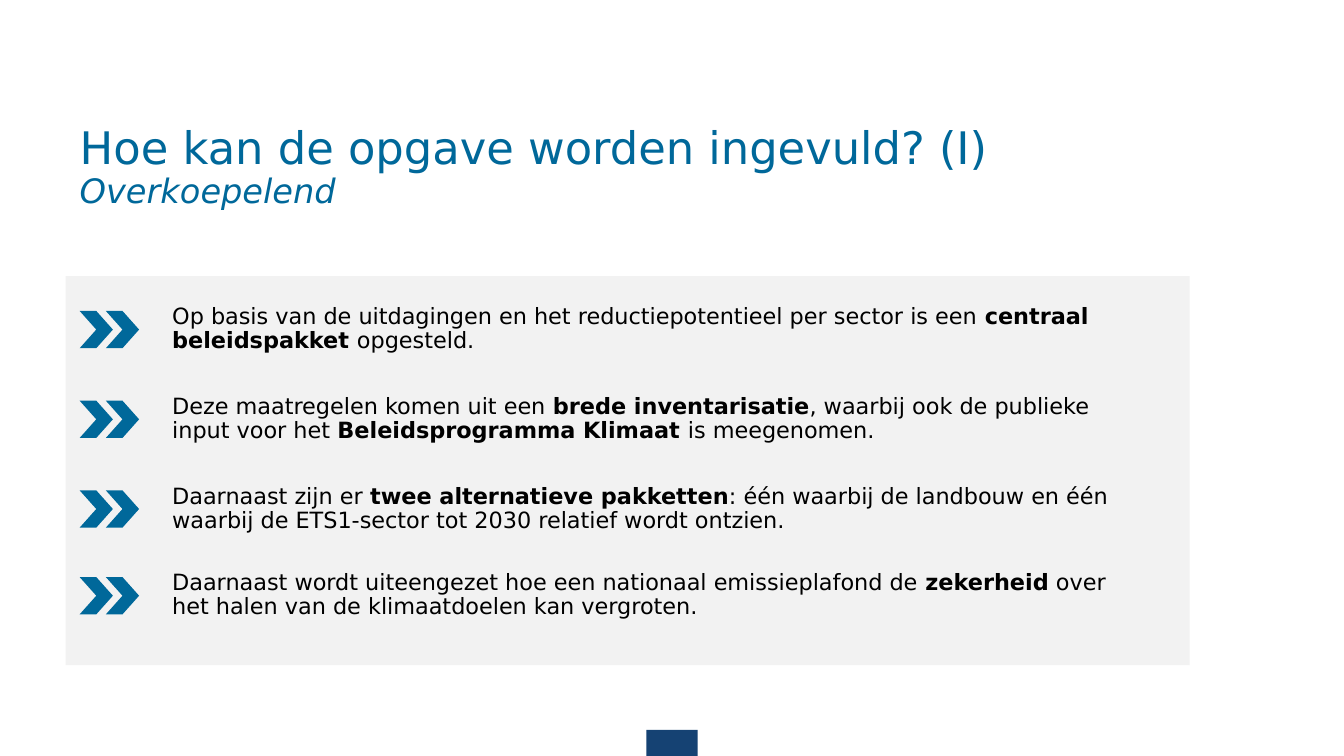
from pptx import Presentation
from pptx.dml.color import RGBColor
from pptx.enum.shapes import MSO_SHAPE
from pptx.enum.text import MSO_ANCHOR, MSO_AUTO_SIZE, PP_ALIGN
from pptx.util import Inches, Pt

RECTANGLE = MSO_SHAPE.RECTANGLE
CHEVRON = MSO_SHAPE.CHEVRON
MIDDLE = MSO_ANCHOR.MIDDLE
NO_AUTOFIT = MSO_AUTO_SIZE.NONE
LEFT = PP_ALIGN.LEFT
TITLE_ONLY = 5

FONT = "DejaVu Sans"
BLUE = "00689A"
NAVY = "154273"
GREY = "F2F2F2"
BLACK = "000000"

CHEVRON_LEFTS = (0.79, 1.05)
CHEVRON_HEIGHT = 0.37

# Each point: vertical centre, box height, text with ** around bold words.
POINTS = [
    (3.27, 0.59, "Op basis van de uitdagingen en het reductiepotentieel per sector is een "
     "**centraal beleidspakket **opgesteld."),
    (4.16, 0.83, "Deze maatregelen komen uit een **brede inventarisatie**, waarbij ook de "
     "publieke input voor het **Beleidsprogramma Klimaat **is meegenomen."),
    (5.05, 0.83, "Daarnaast zijn er **twee alternatieve pakketten**: één waarbij de landbouw "
     "en één waarbij de ETS1-sector tot 2030 relatief wordt ontzien."),
    (5.91, 0.83, "Daarnaast wordt uiteengezet hoe een nationaal emissieplafond de "
     "**zekerheid** over het halen van de klimaatdoelen kan vergroten."),
]


def color(hex_value):
    """Turn a hex string into a colour."""
    return RGBColor.from_string(hex_value)


def format_run(run, size, hex_value):
    """Set the font, size and colour of a run."""
    run.font.name = FONT
    run.font.size = Pt(size)
    run.font.color.rgb = color(hex_value)


def add_filled_shape(shapes, kind, left, top, width, height, fill):
    """Add a flat preset shape without outline."""
    shape = shapes.add_shape(kind, Inches(left), Inches(top), Inches(width), Inches(height))
    shape.shadow.inherit = False
    shape.fill.solid()
    shape.fill.fore_color.rgb = color(fill)
    shape.line.fill.background()


def set_title(slide, heading, subheading):
    """Place the title with an italic second line."""
    title = slide.shapes.title
    title.left, title.top = Inches(0.69), Inches(1.15)
    title.width, title.height = Inches(11.95), Inches(1.04)
    text_frame = title.text_frame
    text_frame.text = f"{heading}\v{subheading}"
    text_frame.auto_size = NO_AUTOFIT
    text_frame.vertical_anchor = MIDDLE
    paragraph = text_frame.paragraphs[0]
    paragraph.alignment = LEFT
    paragraph.line_spacing = 0.9
    heading_run, subheading_run = paragraph.runs
    format_run(heading_run, 32, BLUE)
    format_run(subheading_run, 24, BLUE)
    subheading_run.font.italic = True


def add_point(slide, center, height, text):
    """Add a grouped point: its text and a double chevron."""
    shapes = slide.shapes.add_group_shape().shapes
    box = shapes.add_textbox(Inches(1.61), Inches(center - height / 2),
                             Inches(9.63), Inches(height))
    text_frame = box.text_frame
    text_frame.word_wrap = True
    text_frame.vertical_anchor = MIDDLE
    paragraph = text_frame.paragraphs[0]
    paragraph.line_spacing = 0.9
    for index, part in enumerate(text.split("**")):
        run = paragraph.add_run()
        run.text = part
        format_run(run, 16, BLACK)
        run.font.bold = index % 2 == 1
    for left in CHEVRON_LEFTS:
        add_filled_shape(shapes, CHEVRON, left, center - CHEVRON_HEIGHT / 2,
                         0.33, CHEVRON_HEIGHT, BLUE)


def main():
    """Build and save the slide."""
    presentation = Presentation()
    presentation.slide_width = Inches(13.33)
    presentation.slide_height = Inches(7.5)
    slide = presentation.slides.add_slide(presentation.slide_layouts[TITLE_ONLY])
    add_filled_shape(slide.shapes, RECTANGLE, 6.41, 7.24, 0.51, 0.26, NAVY)
    add_filled_shape(slide.shapes, RECTANGLE, 0.65, 2.74, 11.15, 3.86, GREY)
    set_title(slide, "Hoe kan de opgave worden ingevuld? (I)", "Overkoepelend")
    for center, height, text in POINTS:
        add_point(slide, center, height, text)
    presentation.save("out.pptx")


if __name__ == "__main__":
    main()
